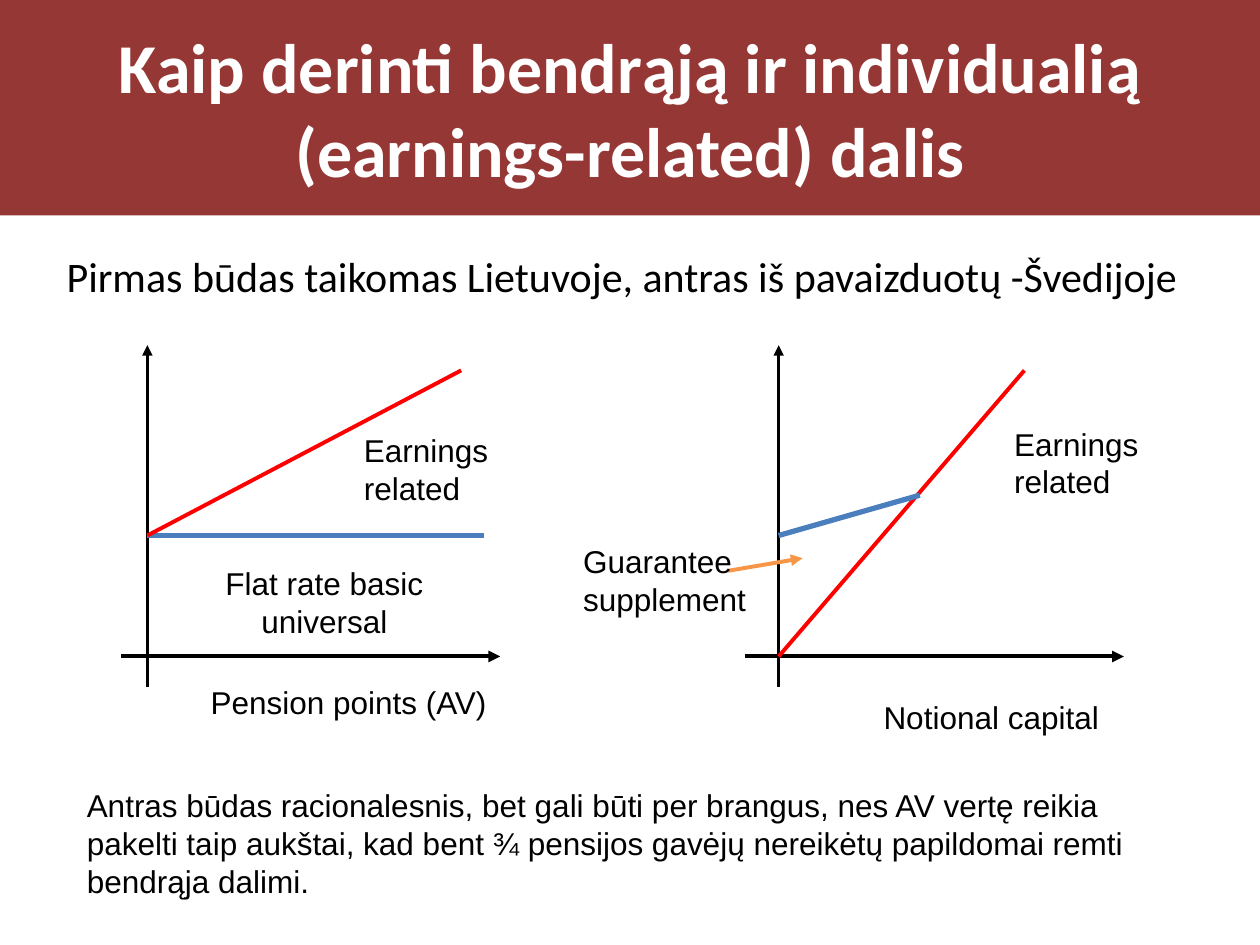
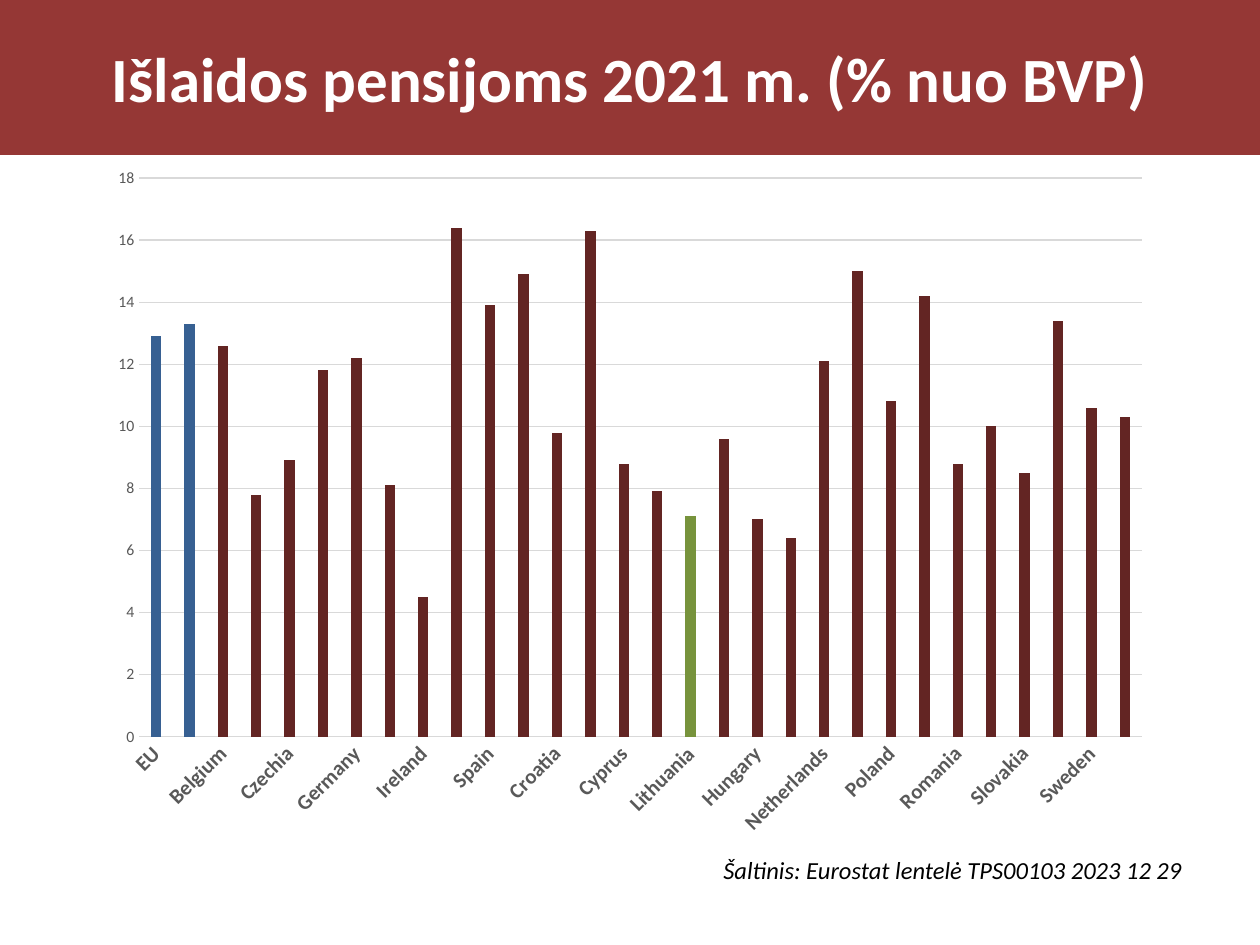
from dataclasses import dataclass
from typing import Any

from lxml import etree
from pptx import Presentation
from pptx.chart.data import CategoryChartData
from pptx.dml.color import RGBColor
from pptx.enum.chart import XL_CHART_TYPE, XL_TICK_MARK
from pptx.enum.shapes import MSO_CONNECTOR, MSO_SHAPE
from pptx.enum.text import MSO_ANCHOR, PP_ALIGN
from pptx.oxml.ns import qn
from pptx.util import Inches, Pt

LEFT, CENTER, RIGHT = PP_ALIGN.LEFT, PP_ALIGN.CENTER, PP_ALIGN.RIGHT
MIDDLE = MSO_ANCHOR.MIDDLE
RECTANGLE = MSO_SHAPE.RECTANGLE
STRAIGHT = MSO_CONNECTOR.STRAIGHT
COLUMN = XL_CHART_TYPE.COLUMN_CLUSTERED
NO_TICK = XL_TICK_MARK.NONE


@dataclass(frozen=True)
class Theme:
    band: str = "953735"
    white: str = "FFFFFF"
    black: str = "000000"
    earnings: str = "FF0000"
    basic: str = "4B7EBC"
    pointer: str = "F79646"
    column: str = "632523"
    average: str = "376092"
    highlight: str = "77933C"
    axis_text: str = "595959"
    grid: str = "D9D9D9"
    heading_font: str = "Calibri"
    label_font: str = "Arial"
    lead_size: float = 24
    label_size: float = 18
    source_size: float = 14
    category_size: float = 12
    chart_size: float = 10
    value_size: float = 9
    axis_width: float = 1.5
    line_width: float = 2.25
    basic_width: float = 3


THEME = Theme()


@dataclass(frozen=True)
class Label:
    lines: tuple[str, ...]
    left: float
    top: float
    width: float
    height: float
    align: Any = LEFT
    size: float = THEME.label_size
    font: str = THEME.label_font
    italic: bool = False


@dataclass(frozen=True)
class Line:
    start: tuple[float, float]
    end: tuple[float, float]
    color: str = THEME.black
    width: float = THEME.line_width
    arrow: bool = False


def format_font(font: Any, color: str, size: float, **values: Any) -> None:
    font.color.rgb = RGBColor.from_string(color)
    for name, value in {"size": Pt(size), **values}.items():
        setattr(font, name, value)


def add_title_band(slide: Any, text: str, height: float, size: float) -> None:
    band = slide.shapes.add_shape(RECTANGLE, 0, 0, Inches(10), Inches(height))
    band.shadow.inherit = False
    band.fill.solid()
    band.fill.fore_color.rgb = RGBColor.from_string(THEME.band)
    band.line.fill.background()
    frame = band.text_frame
    frame.word_wrap = True
    frame.vertical_anchor = MIDDLE
    paragraph = frame.paragraphs[0]
    paragraph.alignment = CENTER
    run = paragraph.add_run()
    run.text = text
    format_font(run.font, THEME.white, size, name=THEME.heading_font, bold=True)


def add_label(slide: Any, label: Label) -> None:
    bounds = (label.left, label.top, label.width, label.height)
    frame = slide.shapes.add_textbox(*map(Inches, bounds)).text_frame
    frame.word_wrap = True
    for index, text in enumerate(label.lines):
        paragraph = frame.add_paragraph() if index else frame.paragraphs[0]
        paragraph.alignment = label.align
        run = paragraph.add_run()
        run.text = text
        format_font(run.font, THEME.black, label.size, name=label.font, italic=label.italic)


def add_line(slide: Any, line: Line) -> None:
    connector = slide.shapes.add_connector(STRAIGHT, *map(Inches, line.start + line.end))
    connector.line.color.rgb = RGBColor.from_string(line.color)
    connector.line.width = Pt(line.width)
    properties = connector._element.spPr
    if line.arrow:
        outline = properties.find(qn("a:ln"))
        etree.SubElement(outline, qn("a:tailEnd"), type="triangle")
    etree.SubElement(properties, qn("a:effectLst"))


# Diagram geometry
AXIS_TOP, AXIS_BOTTOM, BASE = 2.74, 5.45, 5.21
EARNINGS_TOP, BASIC_LEVEL = 2.94, 4.25
POINTS_X, CAPITAL_X = 1.17, 6.18
AXIS_LENGTH = 3.01


def axes(origin: float, start: float) -> list[Line]:
    return [
        Line((start, BASE), (start + AXIS_LENGTH, BASE), arrow=True),
        Line((origin, AXIS_BOTTOM), (origin, AXIS_TOP), width=THEME.axis_width, arrow=True),
    ]


DIAGRAM_LINES = [
    # Pension points
    *axes(POINTS_X, 0.96),
    Line((POINTS_X, BASIC_LEVEL), (3.84, BASIC_LEVEL), THEME.basic, THEME.basic_width),
    Line((POINTS_X, BASIC_LEVEL), (3.66, EARNINGS_TOP), THEME.earnings),
    # Notional capital
    *axes(CAPITAL_X, 5.91),
    Line((CAPITAL_X, BASE), (8.13, EARNINGS_TOP), THEME.earnings),
    Line((CAPITAL_X, BASIC_LEVEL), (7.3, 3.93), THEME.basic, THEME.basic_width),
    Line((5.78, 4.53), (6.37, 4.43), THEME.pointer, arrow=True),
]

DIAGRAM_LABELS = [
    Label(("Pirmas būdas taikomas Lietuvoje, antras iš pavaizduotų -Švedijoje",),
          0.43, 1.94, 9.29, 0.5, size=THEME.lead_size, font=THEME.heading_font),
    Label(("Flat rate basic", "universal"), 1.31, 4.43, 2.53, 0.71, CENTER),
    Label(("Earnings related",), 2.79, 3.37, 1.51, 0.71),
    Label(("Guarantee supplement",), 4.53, 4.25, 1.53, 0.71),
    Label(("Earnings related",), 7.95, 3.32, 1.49, 0.71),
    Label(("Pension points (AV)",), 1.52, 5.37, 2.44, 0.4, RIGHT),
    Label(("Notional capital",), 6.62, 5.49, 2.2, 0.4, RIGHT),
    Label(("Antras būdas racionalesnis, bet gali būti per brangus, nes AV vertę reikia "
           "pakelti taip aukštai, kad bent ¾ pensijos gavėjų nereikėtų papildomai remti "
           "bendrąja dalimi.",), 0.59, 6.19, 8.85, 1.01),
]

SOURCE = Label(("Šaltinis: Eurostat lentelė TPS00103 2023 12 29",), 4.13, 6.74, 5.35, 0.34,
               RIGHT, THEME.source_size, THEME.heading_font, True)

# Pension spending, % of GDP
SPENDING = {
    "EU": 12.9, "Euro area": 13.3, "Belgium": 12.6, "Bulgaria": 7.8, "Czechia": 8.9,
    "Denmark": 11.8, "Germany": 12.2, "Estonia": 8.1, "Ireland": 4.5, "Greece": 16.4,
    "Spain": 13.9, "France": 14.9, "Croatia": 9.8, "Italy": 16.3, "Cyprus": 8.8,
    "Latvia": 7.9, "Lithuania": 7.1, "Luxembourg": 9.6, "Hungary": 7, "Malta": 6.4,
    "Netherlands": 12.1, "Austria": 15, "Poland": 10.8, "Portugal": 14.2, "Romania": 8.8,
    "Slovenia": 10, "Slovakia": 8.5, "Finland": 13.4, "Sweden": 10.6, "Norway": 10.3,
}
COLUMN_COLORS = {
    "EU": THEME.average, "Euro area": THEME.average, "Lithuania": THEME.highlight,
}


def paint(fill: Any, color: str) -> None:
    fill.solid()
    fill.fore_color.rgb = RGBColor.from_string(color)


def add_spending_chart(slide: Any) -> None:
    data = CategoryChartData()
    data.categories = list(SPENDING)
    data.add_series("Series 1", list(SPENDING.values()))
    bounds = map(Inches, (0.77, 1.23, 8.46, 5.51))
    chart = slide.shapes.add_chart(COLUMN, *bounds, data).chart
    chart.has_legend = False
    chart.has_title = False
    format_font(chart.font, THEME.black, THEME.chart_size, name=THEME.heading_font)

    # Columns
    plot = chart.plots[0]
    for name, value in {"gap_width": 219, "overlap": -27, "vary_by_categories": False}.items():
        setattr(plot, name, value)
    series = plot.series[0]
    paint(series.format.fill, THEME.column)
    for index, country in enumerate(SPENDING):
        if country in COLUMN_COLORS:
            paint(series.points[index].format.fill, COLUMN_COLORS[country])

    # Axes
    category_axis, value_axis = chart.category_axis, chart.value_axis
    for axis, size, bold in ((category_axis, THEME.category_size, True),
                             (value_axis, THEME.value_size, False)):
        axis.major_tick_mark = axis.minor_tick_mark = NO_TICK
        format_font(axis.tick_labels.font, THEME.axis_text, size,
                    name=THEME.heading_font, bold=bold)
    label_body = category_axis._element.find(qn("c:txPr")).find(qn("a:bodyPr"))
    label_body.set("rot", "-2700000")
    scale = {"minimum_scale": 0, "maximum_scale": 18, "major_unit": 2,
             "has_major_gridlines": True}
    for name, value in scale.items():
        setattr(value_axis, name, value)
    value_axis.tick_labels.number_format = "#,##0.##########"
    value_axis.tick_labels.number_format = "General"
    value_axis.tick_labels.number_format_is_linked = False
    value_axis.format.line.fill.background()
    for line in (category_axis.format.line, value_axis.major_gridlines.format.line):
        line.color.rgb = RGBColor.from_string(THEME.grid)
        line.width = Pt(0.75)


def main() -> None:
    presentation = Presentation()
    presentation.slide_width, presentation.slide_height = Inches(10), Inches(7.5)
    blank = presentation.slide_layouts[6]

    # Combining the two pension parts
    diagram_slide = presentation.slides.add_slide(blank)
    add_title_band(diagram_slide,
                   "Kaip derinti bendrąją ir individualią (earnings-related) dalis", 1.71, 40)
    for line in DIAGRAM_LINES:
        add_line(diagram_slide, line)
    for label in DIAGRAM_LABELS:
        add_label(diagram_slide, label)

    # Spending by country
    chart_slide = presentation.slides.add_slide(blank)
    add_title_band(chart_slide, "Išlaidos pensijoms 2021 m. (% nuo BVP)", 1.23, 36)
    add_label(chart_slide, SOURCE)
    add_spending_chart(chart_slide)

    presentation.save("out.pptx")


if __name__ == "__main__":
    main()
